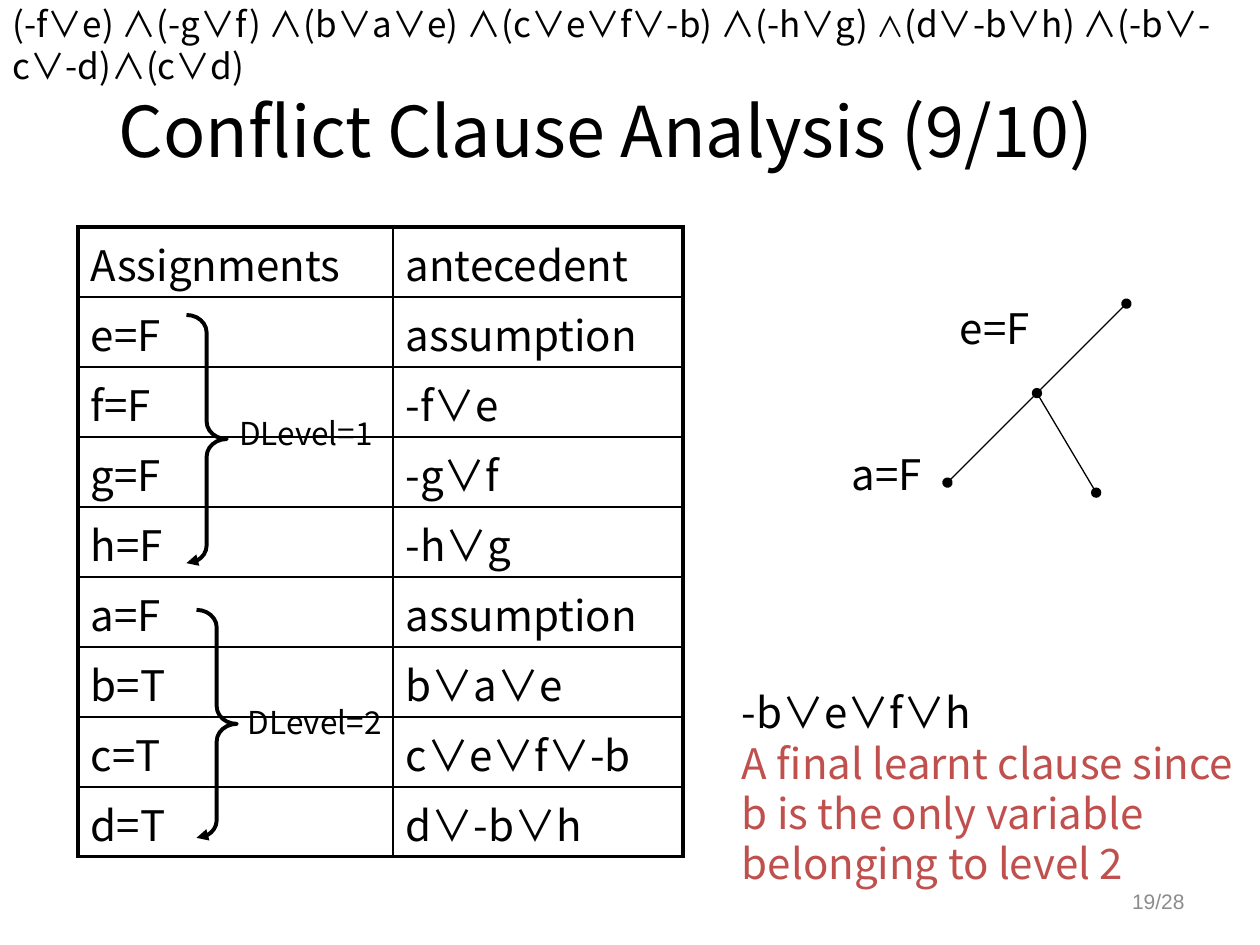
"""Build the conflict clause analysis slide with its table, braces and decision tree."""
from typing import NamedTuple

from lxml import etree
from pptx import Presentation
from pptx.dml.color import RGBColor
from pptx.enum.shapes import MSO_CONNECTOR, MSO_SHAPE
from pptx.enum.text import MSO_ANCHOR, MSO_AUTO_SIZE, PP_ALIGN
from pptx.oxml.ns import qn
from pptx.util import Inches, Pt

STRAIGHT = MSO_CONNECTOR.STRAIGHT
RIGHT_BRACE = MSO_SHAPE.RIGHT_BRACE
TOP, MIDDLE, BOTTOM = MSO_ANCHOR.TOP, MSO_ANCHOR.MIDDLE, MSO_ANCHOR.BOTTOM
CENTER, RIGHT = PP_ALIGN.CENTER, PP_ALIGN.RIGHT
GROW = MSO_AUTO_SIZE.SHAPE_TO_FIT_TEXT
FONT = "Noto Sans CJK KR"
BLACK, RED, GRAY = "000000", "C0504D", "8C8C8C"
THIN, THICK = 1, 2.25


class Box(NamedTuple):
    left: float
    top: float
    width: float
    height: float


class Label(NamedTuple):
    text: str
    box: Box
    size: float = 24
    wrap: bool = False


class Level(NamedTuple):
    label: Label
    brace: Box


class Branch(NamedTuple):
    start: tuple[float, float]
    end: tuple[float, float]


ASSIGNMENTS = [
    ("Assignments", "antecedent"),
    ("e=F", "assumption"),
    ("f=F", "-f∨e"),
    ("g=F", "-g∨f"),
    ("h=F", "-h∨g"),
    ("a=F", "assumption"),
    ("b=T", "b∨a∨e"),
    ("c=T", "c∨e∨f∨-b"),
    ("d=T", "d∨-b∨h"),
]
COLUMN_WIDTHS = (2.5, 2.3)
TABLE_BOX = Box(0.62, 1.8, sum(COLUMN_WIDTHS), 5)
LEVELS = [
    Level(Label("DLevel=2", Box(1.87, 5.53, 1.26, 0.4), 18), Box(1.56, 4.84, 0.32, 1.81)),
    Level(Label("DLevel=1", Box(1.8, 3.24, 1.26, 0.4), 18), Box(1.48, 2.5, 0.32, 1.97)),
]
BRANCHES = [
    Branch((8.94, 2.41), (7.52, 3.83)),
    Branch((8.23, 3.12), (8.7, 3.91)),
]
BRANCH_LABELS = [
    Label("e=F", Box(7.52, 2.35, 0.79, 0.5)),
    Label("a=F", Box(6.66, 3.51, 0.78, 0.5)),
]
LEARNT_CLAUSE = Label("-b∨e∨f∨h", Box(5.79, 5.4, 4.17, 1.72), wrap=True)
EXPLANATION = "A final learnt clause since b is the only variable belonging to level 2"
FORMULA = Label("(-f∨e) ∧(-g∨f) ∧(b∨a∨e) ∧(c∨e∨f∨-b) ∧(-h∨g) ",
                Box(0, -0.03, 10, 0.44), 20, True)
FORMULA_END = "(d∨-b∨h) ∧(-b∨-c∨-d)∧(c∨d)"


def color(value: str) -> RGBColor:
    return RGBColor.from_string(value)


def inches(box: Box) -> list[Inches]:
    return [Inches(length) for length in box]


def style(paragraph, size: float, fill: str = BLACK, name: str = FONT) -> None:
    paragraph.font.size = Pt(size)
    paragraph.font.name = name
    paragraph.font.color.rgb = color(fill)
    properties = paragraph._p.get_or_add_pPr().get_or_add_defRPr()
    etree.SubElement(properties, qn("a:ea"), typeface=name)


def add_label(shapes, label: Label):
    frame = shapes.add_textbox(*inches(label.box)).text_frame
    frame.word_wrap = label.wrap
    frame.auto_size = GROW
    frame.text = label.text
    style(frame.paragraphs[0], label.size)
    return frame


def set_line(shape, width: float, **ends: str) -> None:
    shape.line.color.rgb = color(BLACK)
    shape.line.width = Pt(width)
    line = shape.line._get_or_add_ln()
    for tag, kind in ends.items():
        etree.SubElement(line, qn(f"a:{tag}"), type=kind)


def add_branch(shapes, branch: Branch) -> None:
    points = [Inches(value) for value in branch.start + branch.end]
    connector = shapes.add_connector(STRAIGHT, *points)
    set_line(connector, 0.75, headEnd="oval", tailEnd="oval")
    etree.SubElement(connector._element.spPr, qn("a:effectLst"))


def add_level(shapes, level: Level) -> None:
    group = shapes.add_group_shape()
    add_label(group.shapes, level.label)
    brace = group.shapes.add_shape(RIGHT_BRACE, *inches(level.brace))
    brace.adjustments[0] = 0.436
    brace.adjustments[1] = 0.5
    brace.fill.background()
    set_line(brace, THICK, tailEnd="triangle")
    brace.shadow.inherit = False


def set_borders(cell, widths: dict[str, float]) -> None:
    properties = cell._tc.get_or_add_tcPr()
    for side, width in widths.items():
        line = etree.SubElement(properties, qn(f"a:ln{side}"), w=str(Pt(width)))
        fill = etree.SubElement(line, qn("a:solidFill"))
        etree.SubElement(fill, qn("a:srgbClr"), val=BLACK)


def cell_anchor(row: int, column: int):
    if row == 0 or column == 0:
        return TOP
    return MIDDLE if row == 2 else BOTTOM


def add_assignments(shapes) -> None:
    last_row, last_column = len(ASSIGNMENTS) - 1, len(COLUMN_WIDTHS) - 1
    table = shapes.add_table(last_row + 1, last_column + 1, *inches(TABLE_BOX)).table
    table.first_row = table.horz_banding = False
    for column, width in zip(table.columns, COLUMN_WIDTHS):
        column.width = Inches(width)
    for row, texts in enumerate(ASSIGNMENTS):
        for column, text in enumerate(texts):
            cell = table.cell(row, column)
            cell.text = text
            cell.vertical_anchor = cell_anchor(row, column)
            paragraph = cell.text_frame.paragraphs[0]
            paragraph.space_before = Pt(4.8)
            style(paragraph, 24)
            set_borders(cell, {
                "L": THICK if column == 0 else THIN,
                "R": THICK if column == last_column else THIN,
                "T": THICK if row == 0 else THIN,
                "B": THICK if row == last_row else THIN,
            })
            cell.fill.background()


def add_title(slide) -> None:
    title = slide.shapes.title
    title.left, title.top, title.width, title.height = inches(Box(0.55, 0.23, 8.52, 1.6))
    title.text_frame.text = "Conflict Clause Analysis (9/10)"
    title.text_frame.vertical_anchor = MIDDLE
    title.text_frame.paragraphs[0].alignment = CENTER
    style(title.text_frame.paragraphs[0], 40)


def add_page_number(shapes) -> None:
    frame = shapes.add_textbox(*inches(Box(8.36, 6.95, 1.14, 0.4))).text_frame
    frame.word_wrap = True
    frame.vertical_anchor = MIDDLE
    frame.text = "19/28"
    frame.paragraphs[0].alignment = RIGHT
    style(frame.paragraphs[0], 12, GRAY, "Arial")


def main() -> None:
    presentation = Presentation()
    presentation.slide_width, presentation.slide_height = Inches(10), Inches(7.5)
    slide = presentation.slides.add_slide(presentation.slide_layouts[5])
    shapes = slide.shapes
    add_title(slide)
    add_page_number(shapes)
    for branch in BRANCHES:
        add_branch(shapes, branch)
    for label in BRANCH_LABELS:
        add_label(shapes, label)
    explanation = add_label(shapes, LEARNT_CLAUSE).add_paragraph()
    explanation.text = EXPLANATION
    style(explanation, 24, RED)
    add_assignments(shapes)
    for level in LEVELS:
        add_level(shapes, level)
    formula = add_label(shapes, FORMULA).paragraphs[0]
    for text, size in (("∧", 16), (FORMULA_END, 20)):
        run = formula.add_run()
        run.text = text
        run.font.size = Pt(size)
    presentation.save("out.pptx")


if __name__ == "__main__":
    main()
